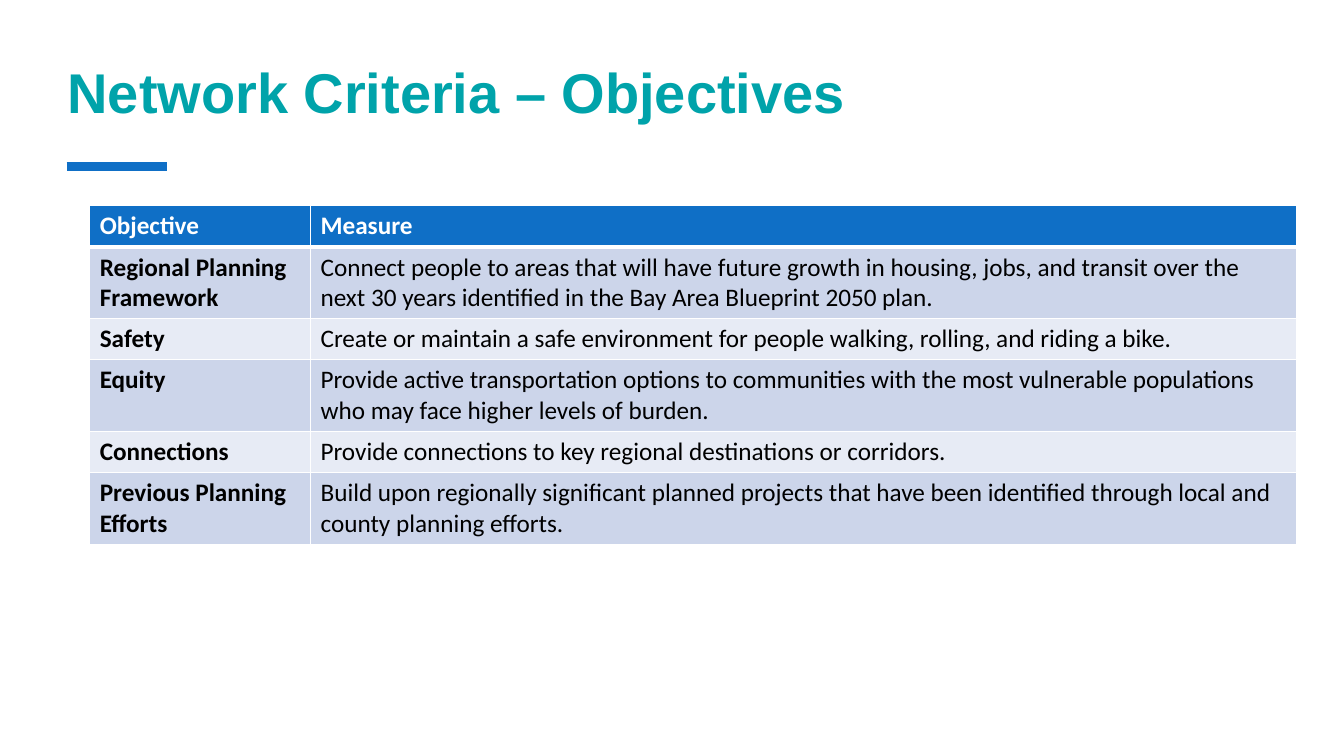
from dataclasses import dataclass
from typing import NamedTuple

from lxml.etree import SubElement
from pptx import Presentation
from pptx.dml.color import RGBColor as Color
from pptx.enum.shapes import MSO_CONNECTOR as Connector
from pptx.enum.text import MSO_ANCHOR as Anchor, MSO_AUTO_SIZE as AutoSize, PP_ALIGN as Align
from pptx.oxml.ns import qn
from pptx.slide import Slide
from pptx.table import _Cell as Cell
from pptx.text.text import _Paragraph as Paragraph
from pptx.util import Inches, Pt


@dataclass(frozen=True)
class Theme:
    title_font: str = "Arial"
    body_font: str = "Calibri"
    title_size: int = 40
    body_size: int = 18
    teal: str = "00A3AA"
    blue: str = "0F6FC6"
    white: str = "FFFFFF"
    black: str = "000000"
    bands: tuple[str, str] = ("CCD5EA", "E7EBF5")
    accent_width: int = 6
    border_width: int = 1
    header_border_width: int = 3


class Criterion(NamedTuple):
    objective: str
    measure: str


THEME = Theme()
COLUMN_WIDTHS = (2.19, 9.78)
ROW_HEIGHT = 0.41
HEADER = Criterion("Objective", "Measure")
CRITERIA = [
    Criterion("Regional Planning Framework",
              "Connect people to areas that will have future growth in housing, jobs, and transit "
              "over the next 30 years identified in the Bay Area Blueprint 2050 plan."),
    Criterion("Safety",
              "Create or maintain a safe environment for people walking, rolling, and riding a bike."),
    Criterion("Equity",
              "Provide active transportation options to communities with the most vulnerable "
              "populations who may face higher levels of burden."),
    Criterion("Connections", "Provide connections to key regional destinations or corridors."),
    Criterion("Previous Planning Efforts",
              "Build upon regionally significant planned projects that have been identified "
              "through local and county planning efforts."),
]


def apply_format(target: object, values: dict[str, object]) -> None:
    for name, value in values.items():
        setattr(target, name, value)


def format_font(paragraph: Paragraph, name: str, size: int, color: str, bold: bool) -> None:
    apply_format(paragraph.font, {"name": name, "size": Pt(size), "bold": bold})
    paragraph.font.color.rgb = Color.from_string(color)


def add_title(slide: Slide, text: str) -> None:
    title = slide.shapes.title
    apply_format(title, {"left": Inches(0.67), "top": Inches(0.27),
                         "width": Inches(12.01), "height": Inches(1.26)})
    frame = title.text_frame
    frame.text = text
    apply_format(frame, {"margin_left": 0, "margin_top": 0, "margin_right": 0, "margin_bottom": 0,
                         "word_wrap": True, "auto_size": AutoSize.NONE,
                         "vertical_anchor": Anchor.MIDDLE})
    paragraph = frame.paragraphs[0]
    paragraph.alignment = Align.LEFT
    format_font(paragraph, THEME.title_font, THEME.title_size, THEME.teal, True)


def add_accent(slide: Slide) -> None:
    accent = slide.shapes.add_connector(Connector.STRAIGHT, Inches(0.66), Inches(1.65),
                                        Inches(1.66), Inches(1.65))
    accent.line.color.rgb = Color.from_string(THEME.blue)
    accent.line.width = Pt(THEME.accent_width)
    SubElement(accent._element.spPr, qn("a:effectLst"))


def add_borders(cell: Cell, row: int) -> None:
    thick_sides = {0: "B", 1: "T"}
    properties = cell._tc.get_or_add_tcPr()
    for side in "LRTB":
        thick = thick_sides.get(row) == side
        width = THEME.header_border_width if thick else THEME.border_width
        border = SubElement(properties, qn(f"a:ln{side}"), w=str(Pt(width)))
        fill = SubElement(border, qn("a:solidFill"))
        SubElement(fill, qn("a:srgbClr"), val=THEME.white)


def format_cell(cell: Cell, text: str, row: int, column: int) -> None:
    is_header = row == 0
    cell.text = text
    color = THEME.white if is_header else THEME.black
    format_font(cell.text_frame.paragraphs[0], THEME.body_font, THEME.body_size, color,
                is_header or column == 0)
    add_borders(cell, row)
    cell.fill.solid()
    background = THEME.blue if is_header else THEME.bands[(row - 1) % 2]
    cell.fill.fore_color.rgb = Color.from_string(background)


def add_criteria_table(slide: Slide) -> None:
    rows = [HEADER, *CRITERIA]
    frame = slide.shapes.add_table(len(rows), len(COLUMN_WIDTHS), Inches(0.89), Inches(2.04),
                                   Inches(sum(COLUMN_WIDTHS)), Inches(ROW_HEIGHT * len(rows)))
    table = frame.table
    for column, width in zip(table.columns, COLUMN_WIDTHS):
        column.width = Inches(width)
    for row, criterion in enumerate(rows):
        table.rows[row].height = Inches(ROW_HEIGHT)
        for column, text in enumerate(criterion):
            format_cell(table.cell(row, column), text, row, column)


def main() -> None:
    presentation = Presentation()
    apply_format(presentation, {"slide_width": Inches(13.33), "slide_height": Inches(7.5)})
    slide = presentation.slides.add_slide(presentation.slide_layouts.get_by_name("Title Only"))

    # Heading
    add_accent(slide)
    add_title(slide, "Network Criteria – Objectives")

    # Objectives and their measures
    add_criteria_table(slide)

    presentation.save("out.pptx")


if __name__ == "__main__":
    main()
